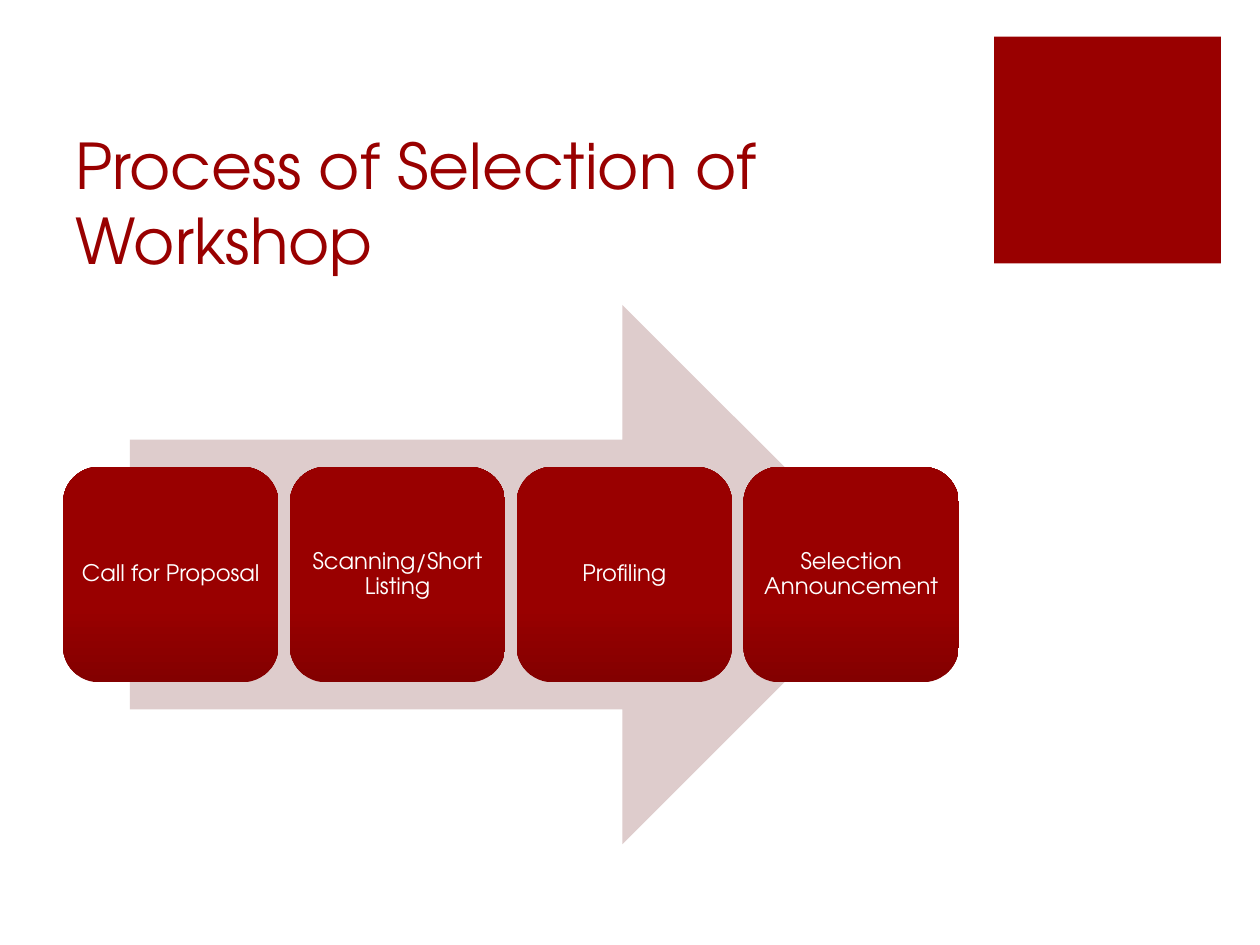
from dataclasses import dataclass

from pptx import Presentation
from pptx.dml.color import RGBColor
from pptx.enum.shapes import MSO_SHAPE as Shape
from pptx.enum.text import MSO_ANCHOR as Anchor, PP_ALIGN as Align
from pptx.util import Inches, Pt

RED = RGBColor(0x99, 0x00, 0x00)
DARK_RED = RGBColor(0x83, 0x00, 0x00)
PALE_RED = RGBColor(0xDE, 0xCC, 0xCC)
WHITE = RGBColor(0xFF, 0xFF, 0xFF)
FONT = "TeX Gyre Adventor"

# Steps sit in equal columns; each box leaves a narrow gap on its right
SLIDE_WIDTH, SLIDE_HEIGHT = 10, 7.5
LEFT_MARGIN = 0.5
COLUMN = 1.8
BOX_SIZE = 0.95 * COLUMN
STEPS = ("Call for Proposal", "Scanning/Short Listing", "Profiling",
         "Selection Announcement")


@dataclass(frozen=True)
class Area:
    left: float
    top: float
    width: float
    height: float

    def lengths(self) -> tuple:
        return tuple(Inches(value) for value in
                     (self.left, self.top, self.width, self.height))


ACCENT = Area(7.89, 0.29, COLUMN, COLUMN)
TITLE = Area(LEFT_MARGIN, 1, 7.12, 1.25)
ARROW = Area(1.03, 2.42, 6.05, 4.28)
BOX_TOP = ARROW.top + (ARROW.height - BOX_SIZE) / 2


def add_block(page, kind: Shape, area: Area, color: RGBColor):
    block = page.shapes.add_shape(kind, *area.lengths())
    block.shadow.inherit = False
    block.fill.solid()
    block.fill.fore_color.rgb = color
    block.line.fill.background()
    return block


def write(para, text: str, size: float, color: RGBColor) -> None:
    span = para.add_run()
    span.text = text
    span.font.name = FONT
    span.font.size = Pt(size)
    span.font.color.rgb = color


def add_title(page, text: str) -> None:
    frame = page.shapes.add_textbox(*TITLE.lengths()).text_frame
    frame.word_wrap = True
    frame.vertical_anchor = Anchor.BOTTOM
    write(frame.paragraphs[0], text, 36, RED)


def add_step(page, column: int, text: str) -> None:
    area = Area(LEFT_MARGIN + column * COLUMN, BOX_TOP, BOX_SIZE, BOX_SIZE)
    box = add_block(page, Shape.ROUNDED_RECTANGLE, area, RED)

    # Shade the lower third, darkest at the bottom edge
    box.fill.gradient()
    box.fill.gradient_angle = 90
    shades = ((0, DARK_RED), (0.35, RED))
    for stop, (position, color) in zip(box.fill.gradient_stops, shades):
        stop.position = position
        stop.color.rgb = color

    frame = box.text_frame
    frame.word_wrap = True
    frame.vertical_anchor = Anchor.MIDDLE
    frame.margin_left = frame.margin_right = Inches(0.05)
    frame.margin_top = frame.margin_bottom = Inches(0.05)
    para = frame.paragraphs[0]
    para.alignment = Align.CENTER
    para.line_spacing = 0.9
    write(para, text, 13, WHITE)


def main() -> None:
    deck = Presentation()
    deck.slide_width = Inches(SLIDE_WIDTH)
    deck.slide_height = Inches(SLIDE_HEIGHT)
    page = deck.slides.add_slide(deck.slide_layouts[6])

    # Heading and corner accent
    add_block(page, Shape.RECTANGLE, ACCENT, RED)
    add_title(page, "Process of Selection of Workshop")

    # Process arrow with its steps in front
    add_block(page, Shape.RIGHT_ARROW, ARROW, PALE_RED)
    for column, step in enumerate(STEPS):
        add_step(page, column, step)

    deck.save("out.pptx")


if __name__ == "__main__":
    main()
